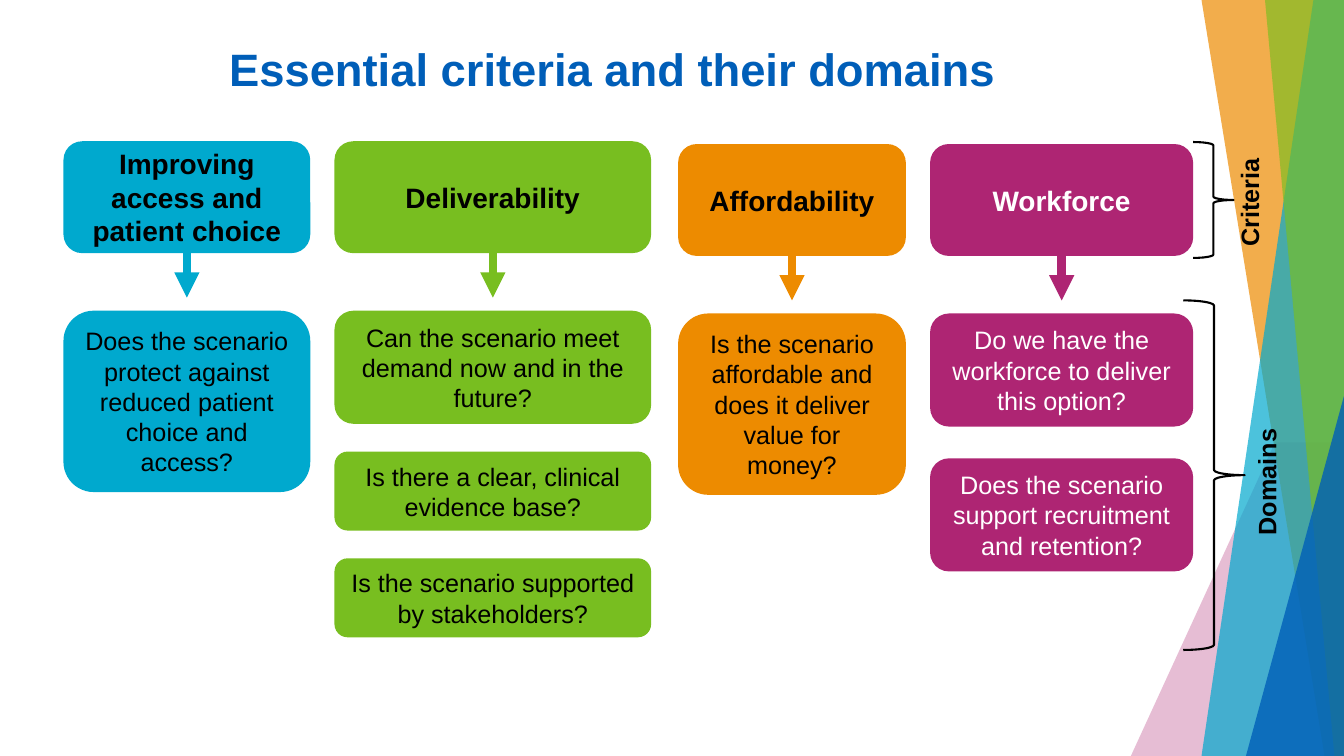
from dataclasses import dataclass

from lxml.etree import SubElement
from pptx import Presentation
from pptx.dml.color import RGBColor
from pptx.enum.shapes import MSO_CONNECTOR as Connector, MSO_SHAPE as Preset
from pptx.enum.text import MSO_ANCHOR as Anchor, PP_ALIGN as Align
from pptx.oxml.ns import qn
from pptx.util import Cm, Pt


@dataclass(frozen=True)
class Theme:
    font: str = "Arial"
    blue: str = "005EB8"
    cyan: str = "00A9CE"
    green: str = "78BE20"
    orange: str = "ED8B00"
    plum: str = "AE2573"
    black: str = "000000"
    white: str = "FFFFFF"
    title_size: float = 32.4
    criterion_size: float = 20
    body_size: float = 18
    arrow_width: float = 6
    brace_width: float = 1.5


def write_text(shape, text, *, size, color, font, bold=False,
               align=Align.CENTER, anchor=Anchor.MIDDLE, wrap=True):
    frame = shape.text_frame
    frame.word_wrap = wrap
    frame.vertical_anchor = anchor
    paragraph = frame.paragraphs[0]
    paragraph.alignment = align
    run = paragraph.add_run()
    run.text = text
    run.font.name = font
    run.font.size = Pt(size)
    run.font.bold = bold
    run.font.color.rgb = RGBColor.from_string(color)


class SlideBuilder:
    def __init__(self, slide, theme):
        self.slide = slide
        self.theme = theme

    def paint(self, shape, color, opacity=100):
        shape.shadow.inherit = False
        shape.line.fill.background()
        shape.fill.solid()
        shape.fill.fore_color.rgb = RGBColor.from_string(color)
        if opacity < 100:
            color_element = shape.fill._xPr.find(qn("a:solidFill"))[0]
            SubElement(color_element, qn("a:alpha"), val=str(opacity * 1000))

    def facet(self, points, color, opacity):
        corners = [(Cm(x), Cm(y)) for x, y in points]
        builder = self.slide.shapes.build_freeform(*corners[0])
        builder.add_line_segments(corners[1:], close=True)
        self.paint(builder.convert_to_shape(), color, opacity)

    def preset(self, kind, left, top, width, height):
        return self.slide.shapes.add_shape(
            kind, Cm(left), Cm(top), Cm(width), Cm(height))

    def corner_triangle(self, left, top, width, height, color, opacity):
        shape = self.preset(Preset.ISOSCELES_TRIANGLE, left, top, width, height)
        shape.adjustments[0] = 1
        self.paint(shape, color, opacity)

    def card(self, text, left, top, width, height, fill, **style):
        shape = self.preset(Preset.ROUNDED_RECTANGLE, left, top, width, height)
        self.paint(shape, fill)
        write_text(shape, text, font=self.theme.font, **style)

    def label(self, text, left, top, width, height, rotation=0, **style):
        box = self.slide.shapes.add_textbox(
            Cm(left), Cm(top), Cm(width), Cm(height))
        box.rotation = rotation
        write_text(box, text, font=self.theme.font, bold=True, **style)

    def brace(self, left, top, width, height):
        shape = self.preset(Preset.RIGHT_BRACE, left, top, width, height)
        shape.shadow.inherit = False
        shape.fill.background()
        shape.line.color.rgb = RGBColor.from_string(self.theme.black)
        shape.line.width = Pt(self.theme.brace_width)

    def down_arrow(self, x, top, bottom, color):
        arrow = self.slide.shapes.add_connector(
            Connector.STRAIGHT, Cm(x), Cm(top), Cm(x), Cm(bottom))
        arrow.line.color.rgb = RGBColor.from_string(color)
        arrow.line.width = Pt(self.theme.arrow_width)
        SubElement(arrow.line._get_or_add_ln(), qn("a:tailEnd"), type="triangle")
        SubElement(arrow._element.spPr, qn("a:effectLst"))


WIDTH, HEIGHT = 33.87, 19.05
CRITERION_HEIGHT = 2.82
DOMAIN_OFFSET = 4.27  # from the top of a criterion to its first domain
LINE_HEIGHT, DOMAIN_PADDING = 0.86, 0.27


def main():
    theme = Theme()
    presentation = Presentation()
    presentation.slide_width = Cm(WIDTH)
    presentation.slide_height = Cm(HEIGHT)
    slide = presentation.slides.add_slide(presentation.slide_layouts[6])
    builder = SlideBuilder(slide, theme)

    # Translucent facets on the right edge
    facets = [
        ([(32.13, 11.15), (WIDTH, 11.15), (WIDTH, HEIGHT), (28.5, HEIGHT)],
         theme.plum, 30),
        ([(30.28, 0), (WIDTH, 0), (WIDTH, HEIGHT), (33.38, HEIGHT)],
         theme.orange, 70),
        ([(33.1, 0), (WIDTH, 0), (WIDTH, HEIGHT), (30.28, HEIGHT)],
         theme.cyan, 70),
        ([(31.88, 0), (WIDTH, 0), (WIDTH, HEIGHT), (33.63, HEIGHT)],
         theme.green, 65),
    ]
    for points, color, opacity in facets:
        builder.facet(points, color, opacity)
    builder.corner_triangle(31.4, 9.98, 2.47, 9.07, theme.blue, 80)

    # Title
    builder.label("Essential criteria and their domains", 1.88, 0.92, 27.1, 1.63,
                  size=theme.title_size, color=theme.blue)

    # Columns: criterion, left, top, width, fill, text colour, gap,
    # then domains with their line counts
    columns = [
        ("Improving access and patient choice",
         1.6, 3.56, 6.22, theme.cyan, theme.black, 0.7,
         [("Does the scenario protect against reduced patient choice and access?", 5)]),
        ("Deliverability",
         8.43, 3.56, 7.98, theme.green, theme.black, 0.7,
         [("Can the scenario meet demand now and in the future?", 3),
          ("Is there a clear, clinical evidence base?", 2),
          ("Is the scenario supported by stakeholders?", 2)]),
        ("Affordability",
         17.09, 3.63, 5.74, theme.orange, theme.black, 0.7,
         [("Is the scenario affordable and does it deliver value for money?", 5)]),
        ("Workforce",
         23.44, 3.63, 6.63, theme.plum, theme.white, 0.8,
         [("Do we have the workforce to deliver this option?", 3),
          ("Does the scenario support recruitment and retention?", 3)]),
    ]
    for criterion, left, top, width, fill, color, gap, domains in columns:
        builder.card(criterion, left, top, width, CRITERION_HEIGHT, fill,
                     size=theme.criterion_size, color=color, bold=True)
        builder.down_arrow(left + width / 2, top + 2.36, top + 3.94, fill)
        domain_top = top + DOMAIN_OFFSET
        for domain, lines in domains:
            height = DOMAIN_PADDING + LINE_HEIGHT * lines
            builder.card(domain, left, domain_top, width, height, fill,
                         size=theme.body_size, color=color)
            domain_top += height + gap

    # Braces and their upright labels
    builder.brace(30.07, 3.58, 1.02, 2.92)
    builder.brace(29.82, 7.57, 1.55, 8.81)
    for text, left, top, width in [("Criteria", 30.07, 4.55, 2.82),
                                   ("Domains", 30.3, 11.61, 3.23)]:
        builder.label(text, left, top, width, 1.02, rotation=270,
                      size=theme.body_size, color=theme.black,
                      align=Align.LEFT, anchor=Anchor.TOP, wrap=False)

    presentation.save("out.pptx")


if __name__ == "__main__":
    main()
